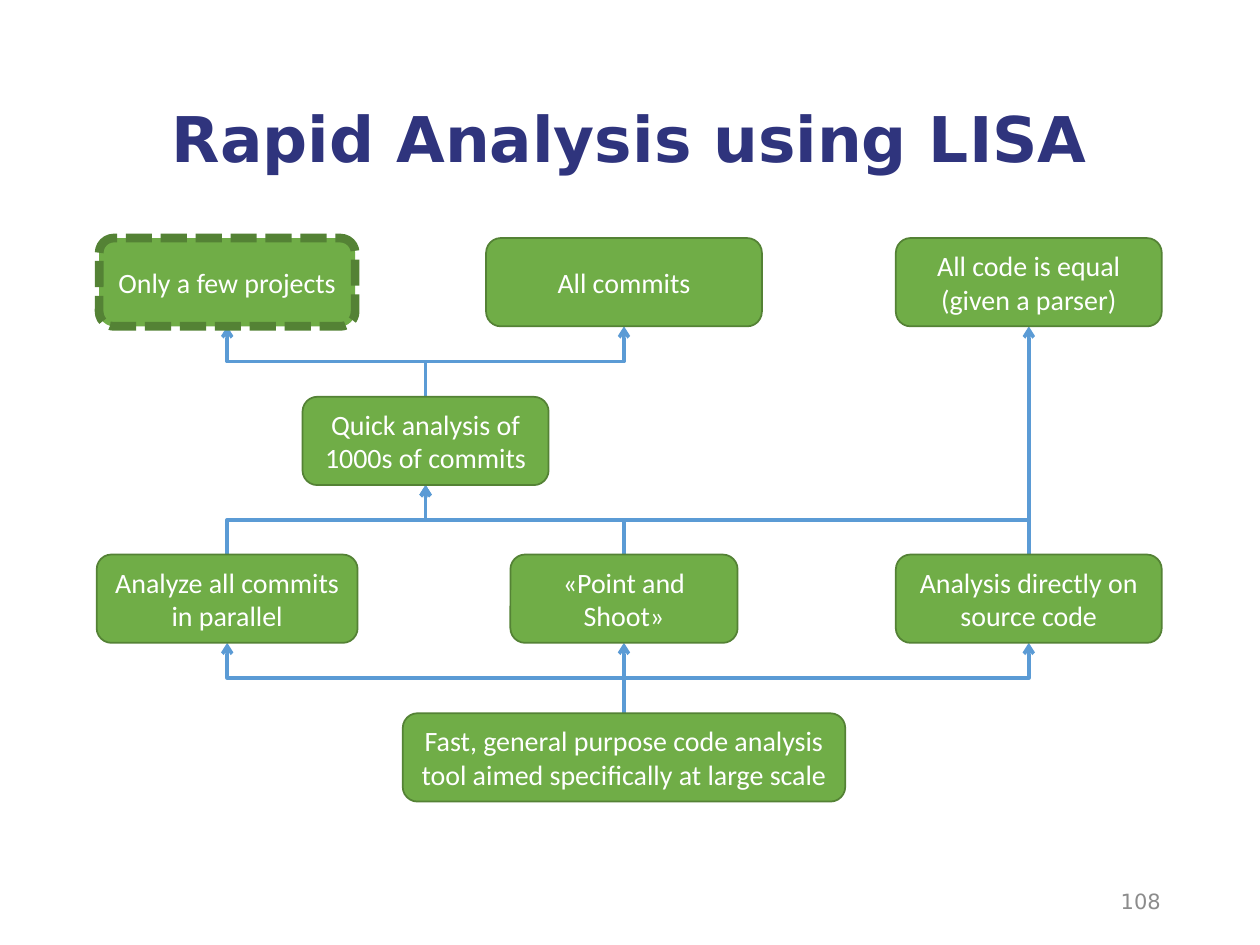
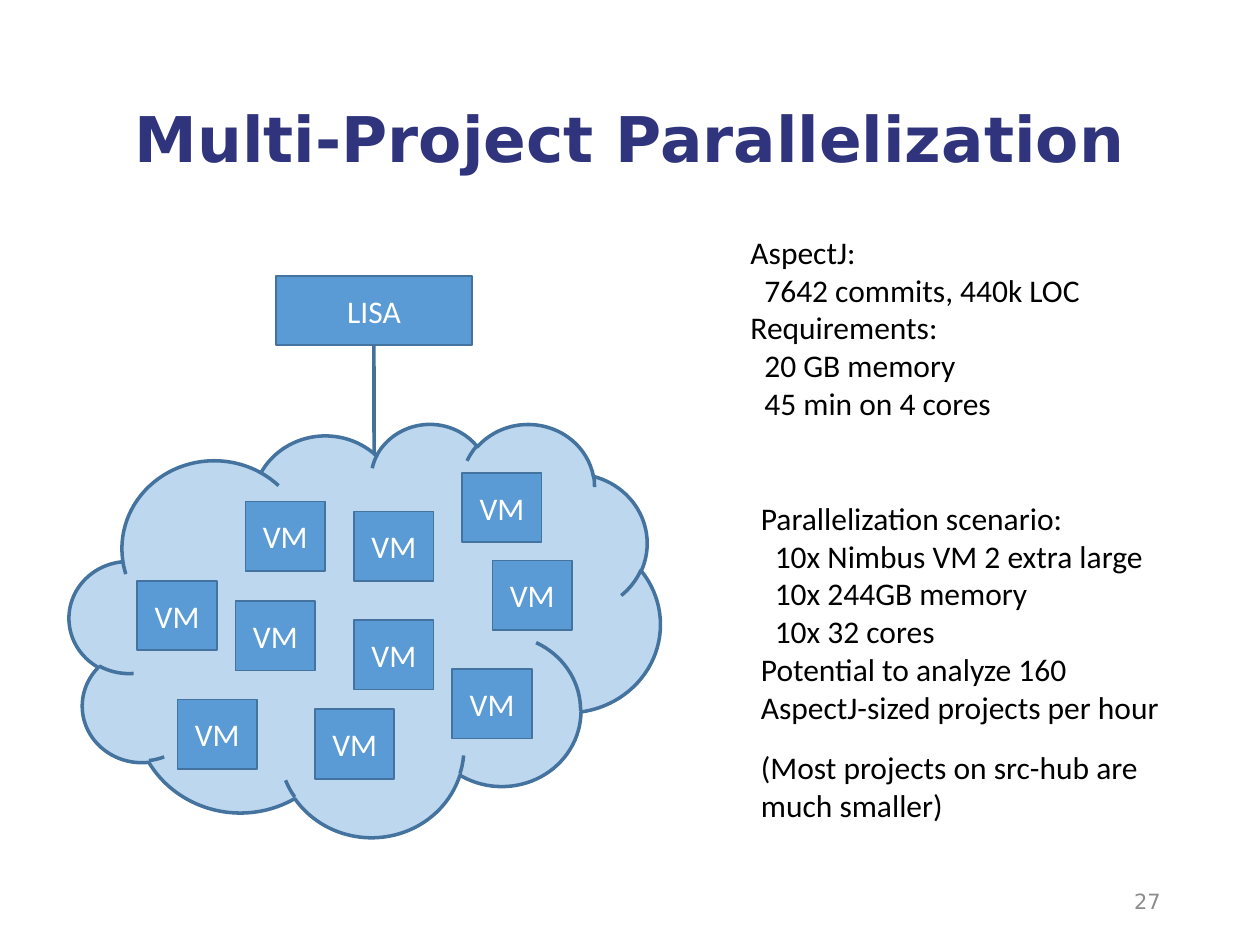
from lxml.etree import SubElement
from pptx import Presentation
from pptx.dml.color import RGBColor
from pptx.enum.dml import MSO_LINE
from pptx.enum.shapes import MSO_CONNECTOR as LINK, MSO_SHAPE as SHAPE
from pptx.enum.text import MSO_ANCHOR as ANCHOR, PP_ALIGN as ALIGN
from pptx.oxml.ns import qn
from pptx.util import Cm, Pt

COLORS = {
    "title": "2F347D", "number": "8C8C8C", "white": "FFFFFF", "black": "000000",
    "green": "70AD47", "dark_green": "548235",
    "blue": "5B9BD5", "border": "43739E", "link": "41719C", "cloud": "BDD7EE",
}
HEADING_FONT, BODY_FONT = "DejaVu Sans", "Calibri"
TOP, BOTTOM = 0, 2  # connection sites


def color(name):
    return RGBColor.from_string(COLORS[name])


def write(frame, text, size=18, font=BODY_FONT, fill="white", bold=False,
          align=ALIGN.CENTER, anchor=ANCHOR.MIDDLE, spacing=None):
    """Fill a text frame with one paragraph per line of text."""
    frame.word_wrap = True
    frame.vertical_anchor = anchor
    for i, line in enumerate(text.split("\n")):
        paragraph = frame.add_paragraph() if i else frame.paragraphs[0]
        paragraph.alignment = align
        paragraph.line_spacing = spacing
        run = paragraph.add_run()
        run.text = line
        run.font.size, run.font.name, run.font.bold = Pt(size), font, bold
        run.font.color.rgb = color(fill)
    return frame.paragraphs


class Deck:
    def __init__(self):
        self.prs = Presentation()
        self.prs.slide_width, self.prs.slide_height = Cm(25.4), Cm(19.05)
        self.slide = None

    def new_slide(self, heading, number):
        self.slide = self.prs.slides.add_slide(self.prs.slide_layouts[5])
        title = self.slide.shapes.title
        title.left, title.top, title.width, title.height = (
            Cm(1.75), Cm(1.02), Cm(21.89), Cm(3.68))
        write(title.text_frame, heading, size=36, font=HEADING_FONT,
              fill="title", bold=True, spacing=0.9)
        self.text(17.93, 17.65, 5.72, 1.02, str(number), size=12, font=HEADING_FONT,
                  fill="number", align=ALIGN.RIGHT)

    def text(self, left, top, width, height, text, **style):
        box = self.slide.shapes.add_textbox(Cm(left), Cm(top), Cm(width), Cm(height))
        return write(box.text_frame, text, **style)

    def shape(self, kind, left, top, width, height, text="", fill="blue",
              border="border", weight=1, dash=None, size=18):
        shape = self.slide.shapes.add_shape(
            kind, Cm(left), Cm(top), Cm(width), Cm(height))
        shape.shadow.inherit = False
        shape.fill.solid()
        shape.fill.fore_color.rgb = color(fill)
        shape.line.color.rgb = color(border)
        shape.line.width = Pt(weight)
        if dash:
            shape.line.dash_style = dash
        if text:
            write(shape.text_frame, text, size=size)
        return shape

    def link(self, kind, start, end, stroke):
        """Add a 2 pt connector behind everything else on the slide."""
        link = self.slide.shapes.add_connector(kind, *start, *end)
        link.line.color.rgb = color(stroke)
        link.line.width = Pt(2)
        SubElement(link._element.spPr, qn("a:effectLst"))
        self.slide.shapes._spTree.insert(2, link._element)
        return link

    def arrow_up(self, source, target):
        """Join the top of source to the bottom of target, bending halfway."""
        start_x, start_y = source.left + source.width // 2, source.top
        end_x, end_y = target.left + target.width // 2, target.top + target.height
        run, rise = end_x - start_x, start_y - end_y
        arrow = self.link(LINK.ELBOW if run else LINK.STRAIGHT,
                          (start_x, start_y), (end_x, end_y), "blue")
        arrow.begin_connect(source, TOP)
        arrow.end_connect(target, BOTTOM)
        SubElement(arrow.line._get_or_add_ln(), qn("a:tailEnd"), type="arrow")
        if run:
            # A quarter turn makes the elbow leave and arrive vertically
            arrow.left = (start_x + end_x - rise) // 2
            arrow.top = (start_y + end_y - abs(run)) // 2
            arrow.width, arrow.height = rise, abs(run)
            frame = arrow._element.spPr.find(qn("a:xfrm"))
            frame.set("rot", "5400000" if run > 0 else "16200000")
            frame.set("flipH", "1" if run > 0 else "0")
            frame.set("flipV", "1")


def rapid_analysis(deck):
    deck.new_slide("Rapid Analysis using LISA", 108)
    columns = {"left": 4.58, "between": 8.58, "middle": 12.58, "right": 20.74}
    rows = {"claims": 4.8, "speed": 8.0, "features": 11.18, "tool": 14.38}

    def box(column, row, width, text, **style):
        return deck.shape(SHAPE.ROUNDED_RECTANGLE, columns[column] - width / 2,
                          rows[row], width, 1.78, text, fill="green",
                          border="dark_green", size=16, **style)

    # Boxes, from the claims down to the tool
    few_projects = box("left", "claims", 5.16, "Only a few projects",
                       weight=5, dash=MSO_LINE.SQUARE_DOT)
    all_commits = box("middle", "claims", 5.56, "All commits")
    equal_code = box("right", "claims", 5.36, "All code is equal\n(given a parser)")
    quick = box("between", "speed", 4.96, "Quick analysis of 1000s of commits")
    parallel = box("left", "features", 5.26, "Analyze all commits in parallel")
    point_shoot = box("middle", "features", 4.58, "«Point and Shoot»")
    direct = box("right", "features", 5.36, "Analysis directly on source code")
    tool = box("middle", "tool", 8.92, "Fast, general purpose code analysis "
               "tool aimed specifically at large scale")

    # What enables what
    enables = [(tool, (parallel, point_shoot, direct)), (parallel, (quick,)),
               (point_shoot, (quick,)), (direct, (quick, equal_code)),
               (quick, (few_projects, all_commits))]
    for source, targets in enables:
        for target in targets:
            deck.arrow_up(source, target)


def parallelization(deck):
    deck.new_slide("Multi-Project Parallelization", 27)

    # Cloud of machines driven by LISA
    lisa = deck.shape(SHAPE.RECTANGLE, 5.56, 5.56, 3.96, 1.4, "LISA")
    deck.shape(SHAPE.CLOUD, 1.4, 8.53, 11.91, 8.33, fill="cloud", weight=2)
    machines = [(4.95, 10.11), (7.14, 10.31), (7.14, 12.5), (9.12, 13.49),
                (6.35, 14.3), (4.75, 12.12), (3.58, 14.1), (2.77, 11.71),
                (9.32, 9.53), (9.93, 11.3)]
    for left, top in machines:
        deck.shape(SHAPE.RECTANGLE, left, top, 1.6, 1.4, "VM")
    cable = deck.link(LINK.STRAIGHT, (Cm(7.54), Cm(6.96)), (Cm(7.54), Cm(9.93)), "link")
    cable.begin_connect(lisa, BOTTOM)

    # Figures beside the cloud
    style = dict(fill="black", align=ALIGN.LEFT, anchor=ANCHOR.TOP)
    needs = deck.text(14.88, 4.57, 8.53, 4.11,
                      "AspectJ:\n7642 commits, 440k LOC\nRequirements:\n"
                      "20 GB memory\n45 min on 4 cores", **style)
    scenario = deck.text(15.09, 9.93, 9.12, 6.86,
                         "Parallelization scenario:\n10x Nimbus VM 2 extra large\n"
                         "10x 244GB memory\n10x 32 cores\nPotential to analyze 160\n"
                         "AspectJ-sized projects per hour\n"
                         "(Most projects on src-hub are much smaller)", **style)
    for detail in (needs[1], *needs[3:], *scenario[1:4]):
        detail._p.get_or_add_pPr().set("marL", str(Cm(0.28)))
    scenario[-1].space_before = Pt(13)


def main():
    deck = Deck()
    rapid_analysis(deck)
    parallelization(deck)
    deck.prs.save("out.pptx")


if __name__ == "__main__":
    main()
